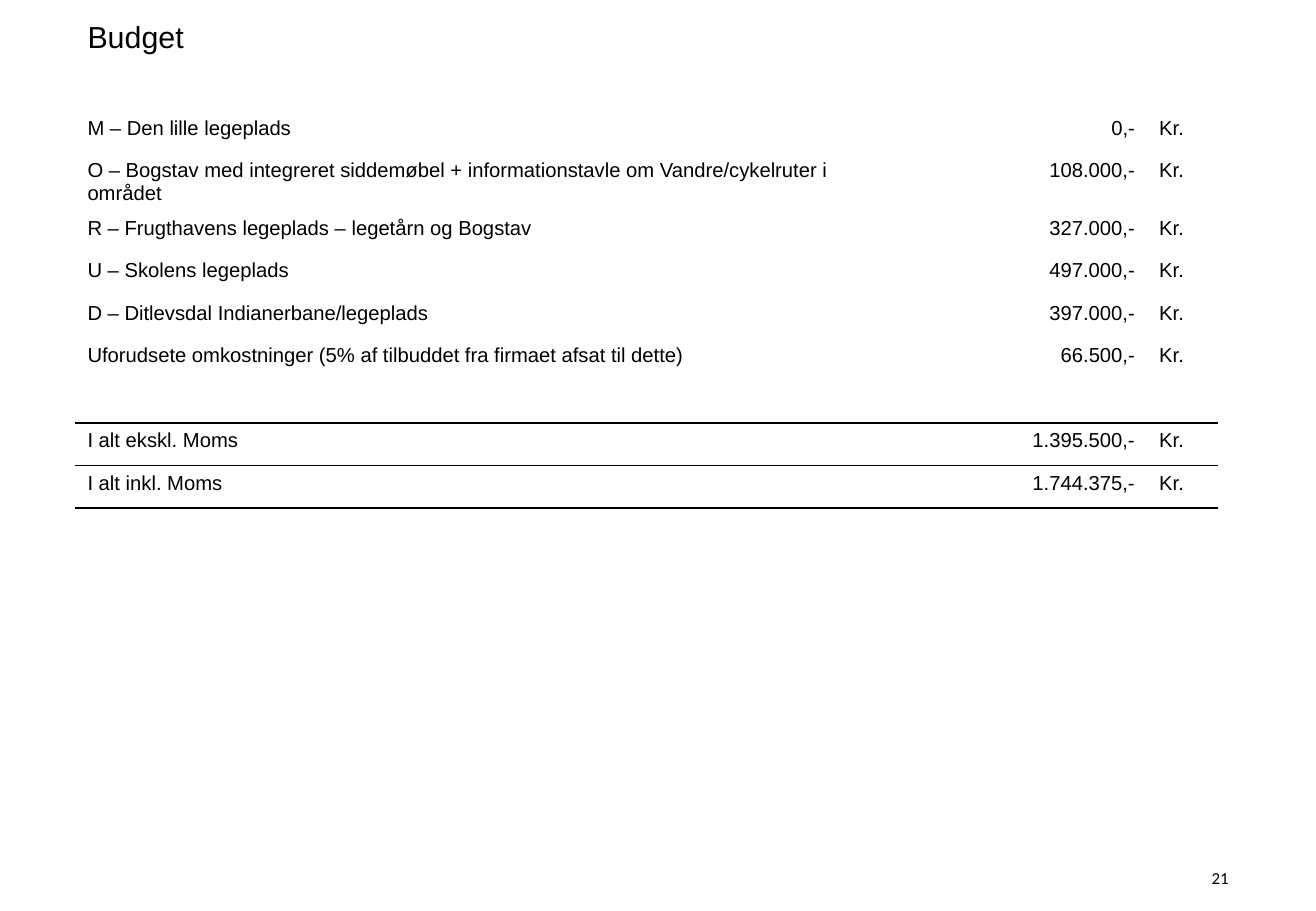
from lxml import etree
from pptx import Presentation
from pptx.dml.color import RGBColor
from pptx.enum.text import MSO_ANCHOR, MSO_AUTO_SIZE, PP_ALIGN
from pptx.oxml.ns import qn
from pptx.util import Inches, Pt

LEFT, RIGHT = PP_ALIGN.LEFT, PP_ALIGN.RIGHT
BOTTOM, MIDDLE = MSO_ANCHOR.BOTTOM, MSO_ANCHOR.MIDDLE
NO_FIT = MSO_AUTO_SIZE.NONE
TITLE_ONLY = 5

BLACK = "000000"
COLUMN_WIDTHS = (6.53, 2.29, 0.58)
ROW_HEIGHT = 0.35
RULED_EDGES = {6: ("lnB",), 7: ("lnT", "lnB"), 8: ("lnT", "lnB")}
BUDGET = [
    ("M – Den lille legeplads", "0,-"),
    ("O – Bogstav med integreret siddemøbel + informationstavle om "
     "Vandre/cykelruter i området", "108.000,-"),
    ("R – Frugthavens legeplads – legetårn og Bogstav", "327.000,-"),
    ("U – Skolens legeplads", "497.000,-"),
    ("D – Ditlevsdal Indianerbane/legeplads", "397.000,-"),
    ("Uforudsete omkostninger (5% af tilbuddet fra firmaet afsat til dette)",
     "66.500,-"),
    None,
    ("I alt ekskl. Moms", "1.395.500,-"),
    ("I alt inkl. Moms", "1.744.375,-"),
]


def color(hex_value):
    return RGBColor.from_string(hex_value)


def write(frame, text, size, align=LEFT, font="Arial"):
    """Set one paragraph of black text."""
    frame.text = text
    para = frame.paragraphs[0]
    para.alignment = align
    for span in para.runs:
        span.font.name = font
        span.font.size = Pt(size)
        span.font.bold = False
        span.font.color.rgb = color(BLACK)
    return para


def rule_cell(cell, edges):
    """Draw 1 pt lines on the named edges of a cell."""
    properties = cell._tc.get_or_add_tcPr()
    for position, edge in enumerate(edges):
        line = etree.Element(qn("a:" + edge), w=str(Pt(1)))
        fill = etree.SubElement(line, qn("a:solidFill"))
        etree.SubElement(fill, qn("a:srgbClr"), val=BLACK)
        properties.insert(position, line)


def add_title(page, box):
    title = page.shapes.title
    title.left, title.top, title.width, title.height = map(Inches, box)
    frame = title.text_frame
    frame.auto_size = NO_FIT
    frame.vertical_anchor = BOTTOM
    write(frame, "Budget", 18).line_spacing = 0.9


def add_budget(page, left, top):
    size = (sum(COLUMN_WIDTHS), ROW_HEIGHT * len(BUDGET))
    table = page.shapes.add_table(
        len(BUDGET), len(COLUMN_WIDTHS), *map(Inches, (left, top, *size))).table
    table.first_row = table.horz_banding = False
    for column, width in zip(table.columns, COLUMN_WIDTHS):
        column.width = Inches(width)
    for index, entry in enumerate(BUDGET):
        table.rows[index].height = Inches(ROW_HEIGHT)
        texts = (*entry, "Kr.") if entry else ("", "", "")
        for cell, text, align in zip(table.rows[index].cells, texts,
                                     (LEFT, RIGHT, LEFT)):
            cell.fill.background()
            rule_cell(cell, RULED_EDGES.get(index, ()))
            write(cell.text_frame, text, 12, align)
            if not entry:  # keep the spacer row at its set height
                cell.margin_top = cell.margin_bottom = 0


def add_page_number(page, box):
    frame = page.shapes.add_textbox(*map(Inches, box)).text_frame
    frame.word_wrap = True
    frame.vertical_anchor = MIDDLE
    write(frame, "21", 10, RIGHT, "Calibri")


def main():
    deck = Presentation()
    deck.slide_width, deck.slide_height = Inches(10.83), Inches(7.5)
    page = deck.slides.add_slide(deck.slide_layouts[TITLE_ONLY])
    add_title(page, (0.62, 0.09, 7.32, 0.41))
    add_budget(page, 0.62, 0.91)
    add_page_number(page, (9.35, 7.1, 0.86, 0.26))
    deck.save("out.pptx")


if __name__ == "__main__":
    main()
